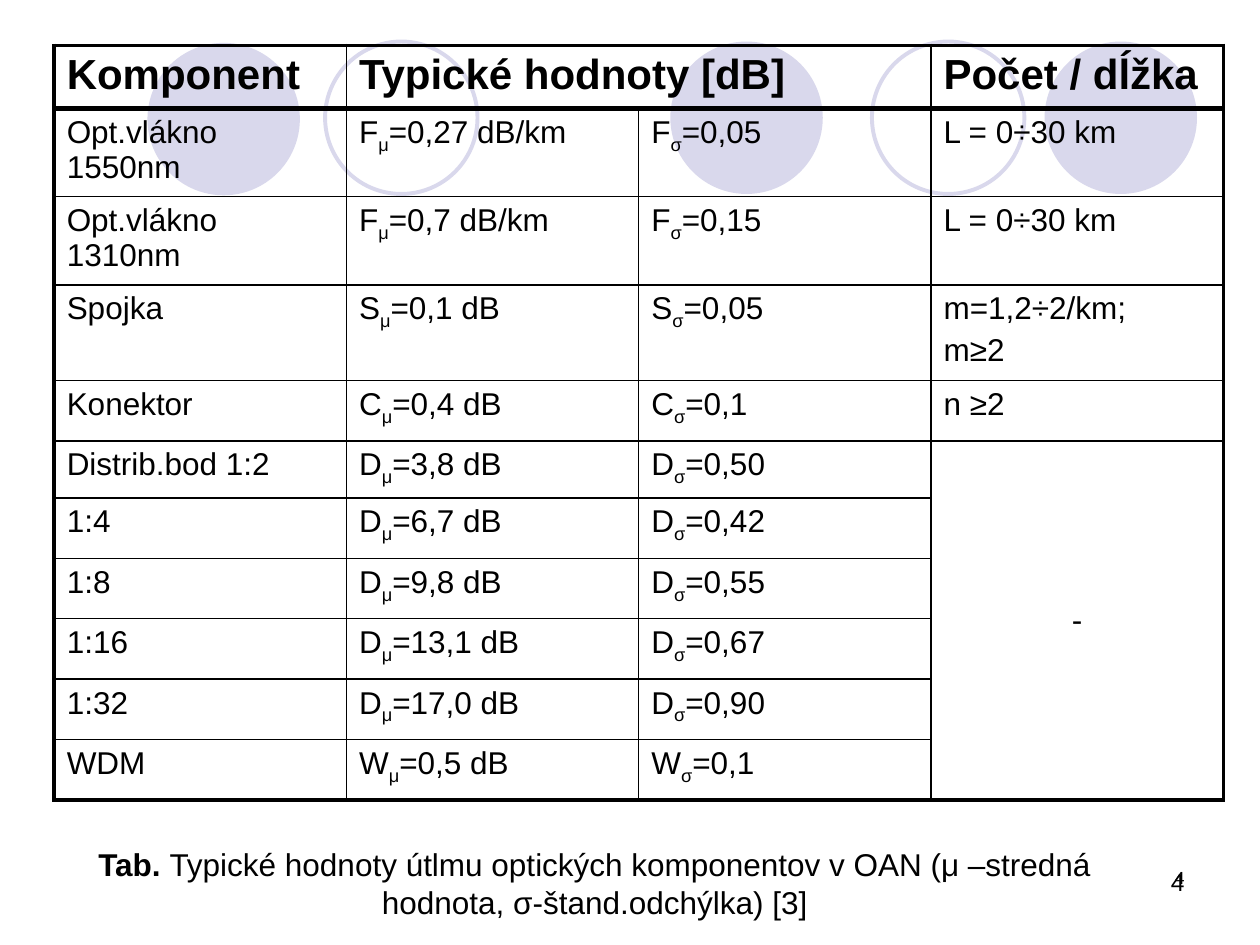
import pptx
import pptx.util
import pptx.dml.color
import pptx.enum.shapes
import pptx.enum.text
import pptx.oxml
import pptx.oxml.ns

Inches = pptx.util.Inches
Pt = pptx.util.Pt
ALIGN = pptx.enum.text.PP_ALIGN
BLACK = "000000"
LILAC = "D9D8EC"
HEADER = {"size": Pt(24), "bold": True}
BODY = {"size": Pt(18), "bold": False}
ROW_HEIGHTS = [0.5, 0.7, 0.7, 0.76, 0.48, 0.45] + [0.48] * 5
COLUMNS = 4
COLUMN_WIDTH = 2.32
COMPONENTS = [
    ("Opt.vlákno 1550nm", "F", "0,27 dB/km", "0,05", ["L = 0÷30 km"]),
    ("Opt.vlákno 1310nm", "F", "0,7 dB/km", "0,15", ["L = 0÷30 km"]),
    ("Spojka", "S", "0,1 dB", "0,05", ["m=1,2÷2/km;", "m≥2"]),
    ("Konektor", "C", "0,4 dB", "0,1", ["n ≥2"]),
    ("Distrib.bod 1:2", "D", "3,8 dB", "0,50", ["-"]),
    ("1:4", "D", "6,7 dB", "0,42", []),
    ("1:8", "D", "9,8 dB", "0,55", []),
    ("1:16", "D", "13,1 dB", "0,67", []),
    ("1:32", "D", "17,0 dB", "0,90", []),
    ("WDM", "W", "0,5 dB", "0,1", []),
]


def color(value):
    """Return an RGB colour from a hex string."""
    return pptx.dml.color.RGBColor.from_string(value)


def add_run(p, text, fmt, subscript=False):
    """Append a formatted run to a paragraph."""
    r = p.add_run()
    r.text = text
    for name, value in {"name": "Arial", **fmt}.items():
        setattr(r.font, name, value)
    r.font.color.rgb = color(BLACK)
    if subscript:
        r.font._element.set("baseline", "-25000")


def add_circle(slide, left, top, filled):
    """Draw a decorative circle, either solid or outlined."""
    sp = slide.shapes.add_shape(pptx.enum.shapes.MSO_SHAPE.OVAL, Inches(left), Inches(top),
                                Inches(1.21), Inches(1.21))
    sp.shadow.inherit = False
    if filled:
        sp.fill.solid()
        sp.fill.fore_color.rgb = color(LILAC)
        sp.line.fill.background()
    else:
        sp.fill.background()
        sp.line.color.rgb = color(LILAC)
        sp.line.width = Pt(2.25)


def add_text(slide, box, runs, align, space=0):
    """Add a wrapped text box holding one paragraph of (text, format) runs."""
    tf = slide.shapes.add_textbox(*(Inches(v) for v in box)).text_frame
    tf.word_wrap = True
    p = tf.paragraphs[0]
    p.alignment = align
    p.space_before = Pt(space)
    for text, fmt in runs:
        add_run(p, text, fmt)


def write_cell(cell, paragraphs, fmt):
    """Fill a cell with paragraphs, each a list of runs whose second is a subscript."""
    tf = cell.text_frame
    for i, runs in enumerate(paragraphs):
        p = tf.add_paragraph() if i else tf.paragraphs[0]
        p.space_before = Pt(fmt["size"].pt * 0.2)
        for j, text in enumerate(runs):
            add_run(p, text, fmt, subscript=j == 1)


def set_borders(cell, widths):
    """Give a cell black borders with widths in points for each side."""
    tcPr = cell._tc.get_or_add_tcPr()
    for side, width in widths.items():
        tcPr.append(pptx.oxml.parse_xml(
            f'<a:ln{side} {pptx.oxml.ns.nsdecls("a")} w="{int(Pt(width))}"><a:solidFill>'
            f'<a:srgbClr val="{BLACK}"/></a:solidFill></a:ln{side}>'))


def add_loss_table(slide):
    """Add the table of typical attenuation values."""
    count = len(ROW_HEIGHTS)
    table = slide.shapes.add_table(count, COLUMNS, Inches(0.43), Inches(0.36),
                                   Inches(COLUMN_WIDTH * COLUMNS), Inches(sum(ROW_HEIGHTS))).table
    table.first_row = table.horz_banding = False
    for column in table.columns:
        column.width = Inches(COLUMN_WIDTH)
    for row, height in zip(table.rows, ROW_HEIGHTS):
        row.height = Inches(height)
    table.cell(0, 1).merge(table.cell(0, 2))
    splitters = table.cell(5, 3)
    splitters.merge(table.cell(count - 1, 3))

    for c, title in ((0, "Komponent"), (1, "Typické hodnoty [dB]"), (3, "Počet / dĺžka")):
        write_cell(table.cell(0, c), [[title]], HEADER)
    for r, (name, symbol, mean, deviation, amount) in enumerate(COMPONENTS, 1):
        contents = ([[name]], [[symbol, "μ", "=" + mean]], [[symbol, "σ", "=" + deviation]],
                    [[line] for line in amount])
        for c, paragraphs in enumerate(contents):
            write_cell(table.cell(r, c), paragraphs, BODY)
    splitters.vertical_anchor = pptx.enum.text.MSO_ANCHOR.MIDDLE
    splitters.text_frame.paragraphs[0].alignment = ALIGN.CENTER

    horizontal = [2.25, 3] + [1] * (count - 2) + [2.25]
    vertical = [2.25] + [1] * (COLUMNS - 1) + [2.25]
    for r in range(count):
        for c in range(COLUMNS):
            cell = table.cell(r, c)
            bottom = r + (cell.span_height if cell.is_merge_origin else 1)
            set_borders(cell, {"L": vertical[c], "R": vertical[c + 1],
                               "T": horizontal[r], "B": horizontal[bottom]})
            cell.fill.background()


def main():
    """Build and save the slide."""
    prs = pptx.Presentation()
    prs.slide_width, prs.slide_height = Inches(10), Inches(7.5)
    slide = prs.slides.add_slide(prs.slide_layouts[6])
    for left, top, filled in ((5.32, 0.33, True), (8.29, 0.33, True), (1.17, 0.34, True),
                              (6.92, 0.33, False), (2.58, 0.33, False)):
        add_circle(slide, left, top, filled)
    for size in (10, 14):
        add_text(slide, (7.17, 6.83, 2.33, 0.5), [("4", {"size": Pt(size)})], ALIGN.RIGHT)
    add_loss_table(slide)
    caption = "Typické hodnoty útlmu optických komponentov v OAN (μ –stredná hodnota, σ-štand.odchýlka) [3]"
    add_text(slide, (0.43, 6.66, 8.58, 0.7), [("Tab. ", {**BODY, "bold": True}), (caption, BODY)],
             ALIGN.CENTER, space=9)
    prs.save("out.pptx")


if __name__ == "__main__":
    main()
